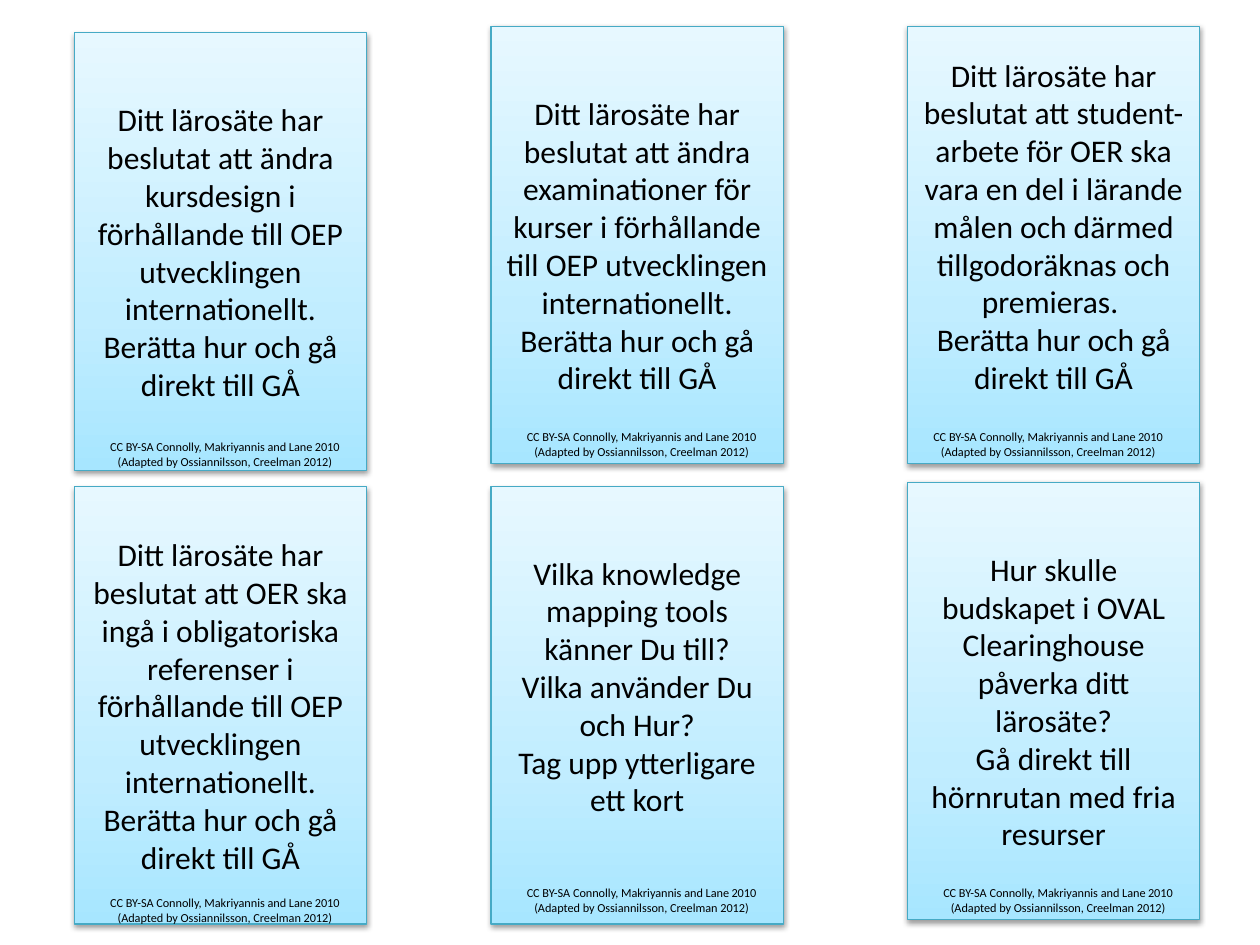
from copy import deepcopy

from lxml.etree import SubElement
from pptx import Presentation
from pptx.dml.color import RGBColor
from pptx.enum.shapes import MSO_SHAPE as SHAPE
from pptx.enum.text import MSO_ANCHOR as ANCHOR, MSO_AUTO_SIZE as AUTO_SIZE, PP_ALIGN as ALIGN
from pptx.oxml.ns import qn
from pptx.util import Pt

FONT = "Calibri"
CARD_W, CARD_H = 167, 250
CREDIT_W, CREDIT_H = 149, 24.5
LINE_H = 22
COLUMNS = [42.5, 280.6, 518.6]
STOPS = [(0, "A7E6FF"), (0.35, "C1EDFF"), (1, "E7F8FF")]
CREDIT = [
    [("CC BY-SA Connolly, Makriyannis and Lane", 7), (" ", 6), ("2010", 7)],
    [("(Adapted by Ossiannilsson, Creelman 2012)", 7)],
]

# column, card top, credit indent, credit top, free lines below the text, paragraphs
CARDS = [
    (0, 18.7, 11.5, 247.7, 0, [
        "Ditt lärosäte har beslutat att ändra kursdesign i förhållande till OEP "
        "utvecklingen internationellt. Berätta hur och gå direkt till GÅ"]),
    (1, 15, 11.5, 242, 0, [
        "Ditt lärosäte har beslutat att ändra examinationer för kurser i förhållande "
        "till OEP utvecklingen internationellt. Berätta hur och gå direkt till GÅ"]),
    (2, 15, 5.8, 242, 1, [
        "Ditt lärosäte har beslutat att student- arbete för OER ska vara en del i "
        "lärande målen och därmed tillgodoräknas och premieras. ",
        "Berätta hur och gå direkt till GÅ"]),
    (0, 278, 11.5, 508.3, 0, [
        "Ditt lärosäte har beslutat att OER ska ingå i obligatoriska referenser i "
        "förhållande till OEP utvecklingen internationellt. Berätta hur och gå "
        "direkt till GÅ"]),
    (1, 278, 11.5, 502.6, 1, [
        "Vilka knowledge mapping tools känner Du till?",
        "Vilka använder Du och Hur?",
        "Tag upp ytterligare ett kort"]),
    (2, 275.6, 11.5, 502.6, 0, [
        "Hur skulle budskapet i OVAL Clearinghouse påverka ditt lärosäte?",
        "Gå direkt till hörnrutan med fria resurser"]),
]


def color(value):
    return RGBColor.from_string(value)


def format_run(r, size):
    r.font.name = FONT
    r.font.size = Pt(size)
    r.font.color.rgb = color("000000")


def fill_gradient(s):
    """Fill the shape with STOPS, running from bottom to top."""
    s.fill.gradient()
    s.fill.gradient_angle = 90
    stop_list = s._element.spPr.find(qn("a:gradFill")).find(qn("a:gsLst"))
    stop_list.append(deepcopy(stop_list[-1]))
    for stop, (position, value) in zip(s.fill.gradient_stops, STOPS):
        stop.position = position
        stop.color.rgb = color(value)


def add_shadow(s):
    s.shadow.inherit = False
    effects = s._element.spPr.find(qn("a:effectLst"))
    shadow = SubElement(effects, qn("a:outerShdw"), blurRad=str(Pt(3.1)),
                        dist=str(Pt(1.6)), dir="5400000", rotWithShape="0")
    black = SubElement(shadow, qn("a:srgbClr"), val="000000")
    SubElement(black, qn("a:alpha"), val="38000")


def add_card(slide, left, top, paragraphs, free_lines):
    s = slide.shapes.add_shape(SHAPE.RECTANGLE, Pt(left), Pt(top), Pt(CARD_W), Pt(CARD_H))
    fill_gradient(s)
    s.line.color.rgb = color("46AAC5")
    s.line.width = Pt(0.75)
    add_shadow(s)
    tf = s.text_frame
    tf.word_wrap = True
    tf.vertical_anchor = ANCHOR.MIDDLE
    tf.margin_bottom = Pt(3.6 + free_lines * LINE_H)
    tf.text = "\n".join(paragraphs)
    for p in tf.paragraphs:
        p.alignment = ALIGN.CENTER
        format_run(p.runs[0], 18)


def add_credit(slide, left, top):
    s = slide.shapes.add_textbox(Pt(left), Pt(top), Pt(CREDIT_W), Pt(CREDIT_H))
    tf = s.text_frame
    tf.word_wrap = False
    tf.auto_size = AUTO_SIZE.SHAPE_TO_FIT_TEXT
    for i, pieces in enumerate(CREDIT):
        p = tf.add_paragraph() if i else tf.paragraphs[0]
        p.alignment = ALIGN.CENTER
        for text, size in pieces:
            r = p.add_run()
            r.text = text
            format_run(r, size)


def main():
    prs = Presentation()
    prs.slide_width, prs.slide_height = Pt(720), Pt(540)
    slide = prs.slides.add_slide(prs.slide_layouts[6])
    for column, top, _, _, free_lines, paragraphs in CARDS:
        add_card(slide, COLUMNS[column], top, paragraphs, free_lines)
    for column, _, indent, credit_top, _, _ in CARDS:
        add_credit(slide, COLUMNS[column] + indent, credit_top)
    prs.save("out.pptx")


if __name__ == "__main__":
    main()
